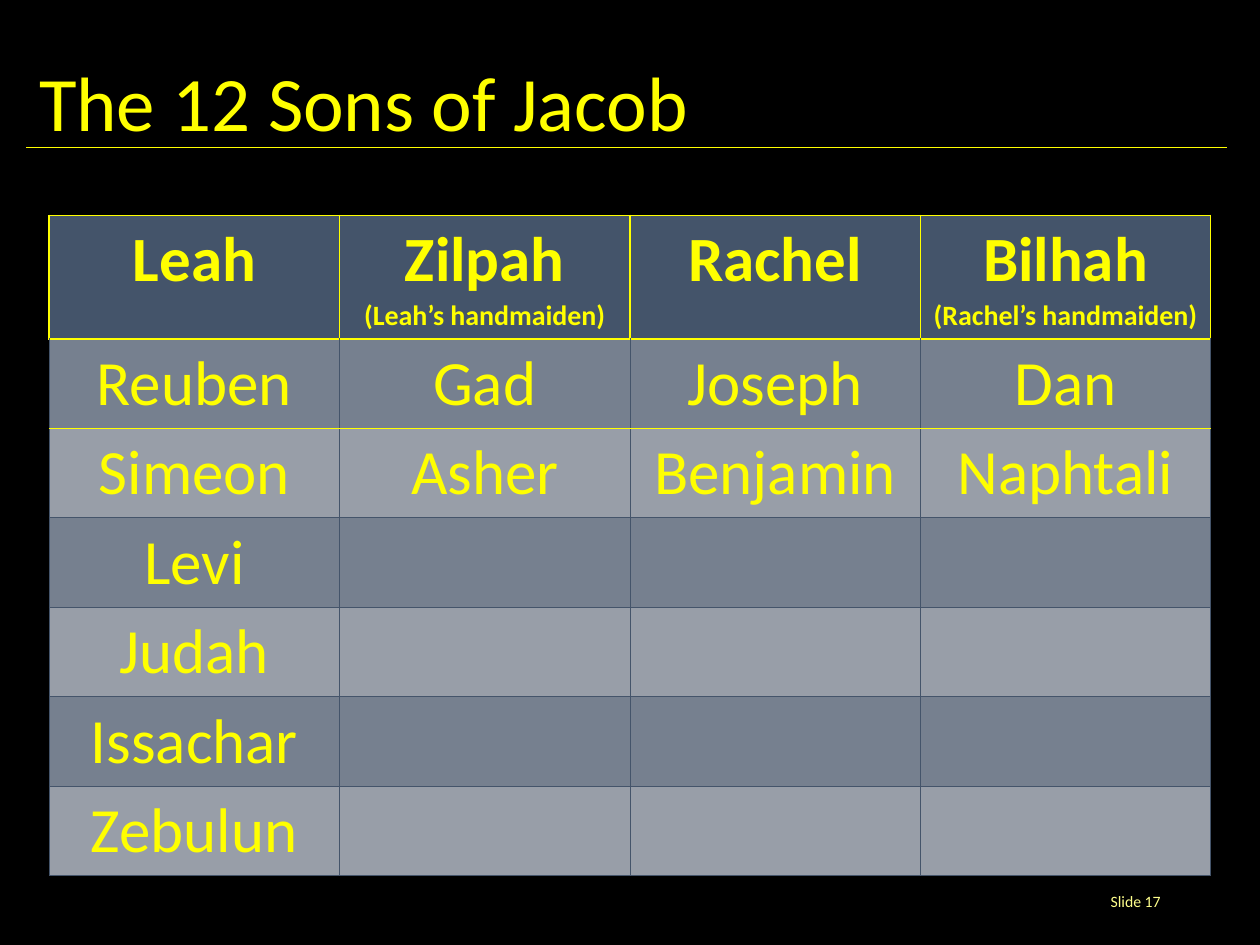
from lxml.etree import SubElement
from pptx import Presentation
from pptx.dml.color import RGBColor
from pptx.enum.shapes import MSO_CONNECTOR
from pptx.enum.text import MSO_ANCHOR, PP_ALIGN
from pptx.oxml import parse_xml
from pptx.oxml.ns import nsdecls, qn
from pptx.util import Inches, Pt

TITLE = "The 12 Sons of Jacob"
FOOTER = "Slide 17"
MOTHERS = [
    ("Leah", ""),
    ("Zilpah", "(Leah’s handmaiden)"),
    ("Rachel", ""),
    ("Bilhah", "(Rachel’s handmaiden)"),
]
SONS = [
    ["Reuben", "Simeon", "Levi", "Judah", "Issachar", "Zebulun"],
    ["Gad", "Asher"],
    ["Joseph", "Benjamin"],
    ["Dan", "Naphtali"],
]
SON_ROWS = max(map(len, SONS))

YELLOW, PALE_YELLOW, SLATE = "FFFF00", "FFFF8C", "44546A"
BANDS = ["76808F", "989EA8"]
TABLE_LEFT, TABLE_TOP, TABLE_WIDTH = 0.39, 1.71, 9.22
HEADER_HEIGHT, ROW_HEIGHT = 0.98, 0.71
RULE_Y = 1.17
RULES = [(0.69, 9.31), (0.21, 9.74)]


def color(value):
    return RGBColor.from_string(value)


def write(para, text, size=36, ink=YELLOW, bold=False, align=PP_ALIGN.CENTER):
    para.alignment = align
    span = para.add_run()
    span.text = text
    span.font.name = "Calibri"
    span.font.size = Pt(size)
    span.font.bold = bold
    span.font.color.rgb = color(ink)


def set_borders(cell, **edges):
    """Edges L, R, T and B each take (colour, points); call before filling."""
    properties = cell._tc.get_or_add_tcPr()
    for side in "LRTB":
        ink, points = edges[side]
        properties.append(parse_xml(
            f'<a:ln{side} {nsdecls("a")} w="{Pt(points)}"><a:solidFill>'
            f'<a:srgbClr val="{ink}"/></a:solidFill></a:ln{side}>'))


def paint(cell, fill):
    cell.fill.solid()
    cell.fill.fore_color.rgb = color(fill)


def add_rule(page, left, right):
    rule = page.shapes.add_connector(
        MSO_CONNECTOR.STRAIGHT, Inches(left), Inches(RULE_Y),
        Inches(right), Inches(RULE_Y))
    rule.line.color.rgb = color(YELLOW)
    rule.line.width = Pt(0.5)
    SubElement(rule._element.spPr, qn("a:effectLst"))


def add_title(page):
    title = page.shapes.title
    title.left, title.top = Inches(0.21), Inches(0.4)
    title.width, title.height = Inches(9.53), Inches(0.89)
    title.text_frame.vertical_anchor = MSO_ANCHOR.MIDDLE
    para = title.text_frame.paragraphs[0]
    para.line_spacing = 0.9
    write(para, TITLE, size=44, align=PP_ALIGN.LEFT)


def add_footer(page):
    box = page.shapes.add_textbox(
        Inches(7.06), Inches(6.95), Inches(2.25), Inches(0.4))
    box.text_frame.word_wrap = True
    box.text_frame.vertical_anchor = MSO_ANCHOR.MIDDLE
    write(box.text_frame.paragraphs[0], FOOTER, size=9, ink=PALE_YELLOW,
          align=PP_ALIGN.RIGHT)


def add_family_table(page):
    table = page.shapes.add_table(
        SON_ROWS + 1, len(MOTHERS), Inches(TABLE_LEFT), Inches(TABLE_TOP),
        Inches(TABLE_WIDTH), Inches(HEADER_HEIGHT + SON_ROWS * ROW_HEIGHT)).table
    table.horz_banding = False
    for index, row in enumerate(table.rows):
        row.height = Inches(ROW_HEIGHT if index else HEADER_HEIGHT)

    strong, thin = (YELLOW, 1), (SLATE, 0.5)
    for column, ((mother, note), sons) in enumerate(zip(MOTHERS, SONS)):
        header = table.cell(0, column)
        set_borders(header, L=strong, R=strong, T=strong, B=strong)
        paint(header, SLATE)
        write(header.text_frame.paragraphs[0], mother, bold=True)
        if note:
            write(header.text_frame.add_paragraph(), note, size=16, bold=True)

        for index in range(SON_ROWS):
            cell = table.cell(index + 1, column)
            # Strong lines run above and below the firstborn row.
            set_borders(cell, L=thin, R=thin,
                        T=strong if index < 2 else thin,
                        B=strong if index == 0 else thin)
            paint(cell, BANDS[index % 2])
            if index < len(sons):
                write(cell.text_frame.paragraphs[0], sons[index])


def main():
    deck = Presentation()
    deck.slide_width, deck.slide_height = Inches(10), Inches(7.5)
    page = deck.slides.add_slide(deck.slide_layouts[5])
    page.background.fill.solid()
    page.background.fill.fore_color.rgb = color("000000")
    for left, right in RULES:
        add_rule(page, left, right)
    add_title(page)
    add_footer(page)
    add_family_table(page)
    deck.save("out.pptx")


if __name__ == "__main__":
    main()
